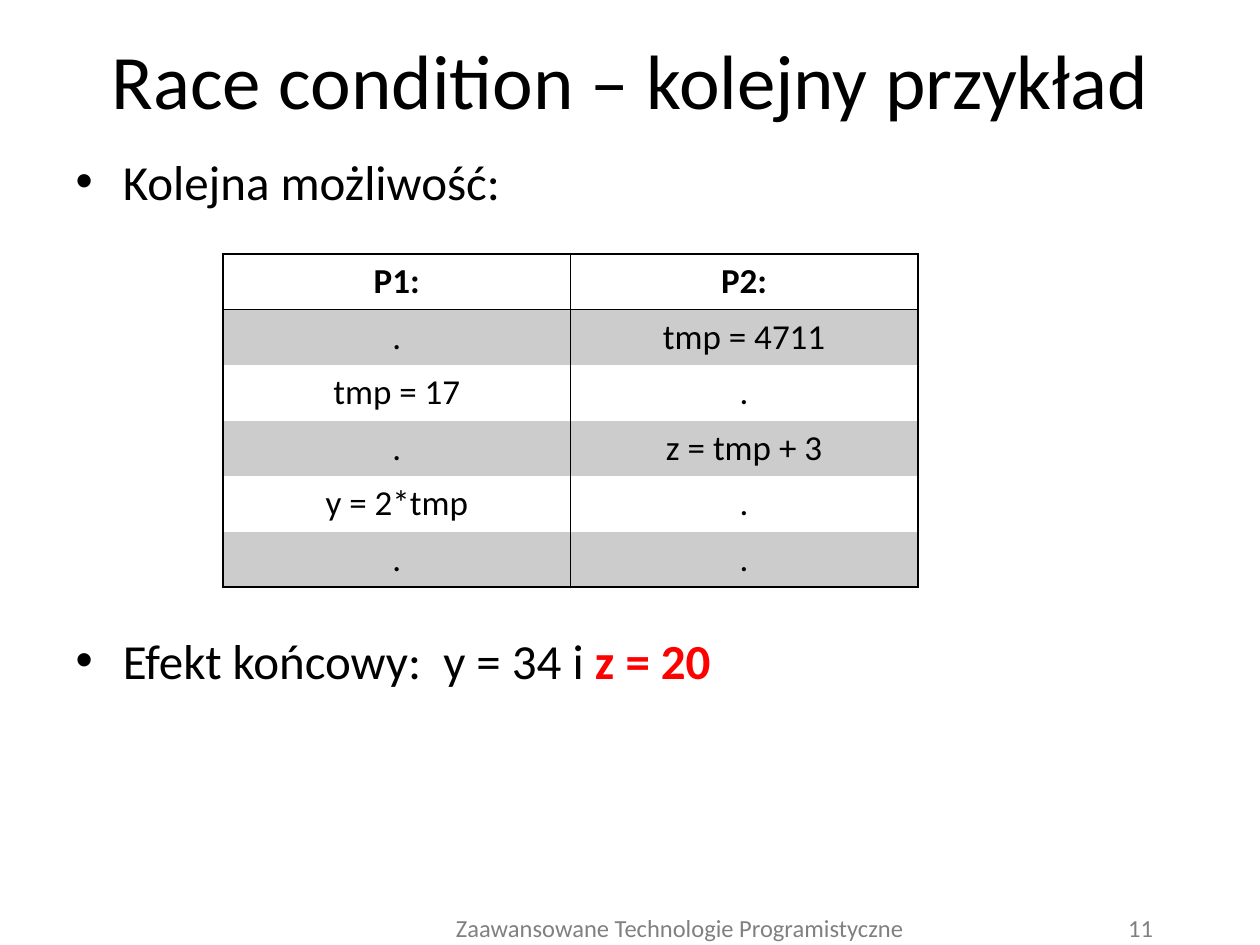
from pptx import Presentation
from pptx.dml.color import RGBColor
from pptx.enum.text import MSO_ANCHOR as Anchor, MSO_AUTO_SIZE as AutoSize, PP_ALIGN as Align
from pptx.oxml import parse_xml
from pptx.oxml.ns import nsdecls
from pptx.util import Pt

BLACK = RGBColor(0x00, 0x00, 0x00)
RED = RGBColor(0xFF, 0x00, 0x00)
GREY = RGBColor(0x80, 0x80, 0x80)
BAND = RGBColor(0xCC, 0xCC, 0xCC)
NO_STYLE = "{2D5ABB26-0587-4C30-8999-92F81FD0307C}"

STEPS = [
    ("P1:", "P2:"),
    (".", "tmp = 4711"),
    ("tmp = 17", "."),
    (".", "z = tmp + 3"),
    ("y = 2*tmp", "."),
    (".", "."),
]


def apply(obj, **values):
    """Set each given value as an attribute of the object."""
    for name, value in values.items():
        setattr(obj, name, value)


def place(sp, box):
    """Move a shape to a box of left, top, width and height."""
    apply(sp, **dict(zip(("left", "top", "width", "height"), map(Pt, box))))


def add_run(p, text, size, color=BLACK, bold=False):
    """Add a formatted run to a paragraph."""
    r = p.add_run()
    r.text = text
    apply(r.font, name="Calibri", size=Pt(size), bold=bold)
    r.font.color.rgb = color


def fill_title(sp, box, text):
    """Write the slide title in its placeholder."""
    place(sp, box)
    tf = sp.text_frame
    apply(tf, vertical_anchor=Anchor.MIDDLE, auto_size=AutoSize.NONE)
    p = tf.paragraphs[0]
    p.alignment = Align.CENTER
    add_run(p, text, 44)


def fill_body(sp, box):
    """Write the two bullets, leaving room between them for the table."""
    place(sp, box)
    tf = sp.text_frame
    tf.auto_size = AutoSize.NONE
    add_run(tf.paragraphs[0], "Kolejna możliwość:", 28)
    p = tf.add_paragraph()
    p.space_before = Pt(240)
    add_run(p, "Efekt końcowy:  y = 34 i ", 28)
    add_run(p, "z = 20", 28, RED, True)


def add_borders(cell, sides):
    """Draw thin black lines on the given sides of a cell."""
    for side in sides:
        cell._tc.get_or_add_tcPr().append(parse_xml(
            f'<a:ln{side} {nsdecls("a")} w="12700"><a:solidFill>'
            f'<a:srgbClr val="{BLACK}"/></a:solidFill></a:ln{side}>'))


def add_steps_table(slide, box, rows):
    """Add the table of interleaved process steps."""
    left, top, width, height = map(Pt, box)
    frame = slide.shapes.add_table(len(rows), len(rows[0]), left, top, width, height)
    table = frame.table
    apply(table, first_row=False, horz_banding=False)
    table._tbl.tblPr.find("{*}tableStyleId").text = NO_STYLE
    for i, row in enumerate(rows):
        sides = "LRTB" if i == 0 else "LRB" if i == len(rows) - 1 else "LR"
        for j, text in enumerate(row):
            cell = table.cell(i, j)
            cell.vertical_anchor = Anchor.MIDDLE
            add_borders(cell, sides)
            if i % 2:
                cell.fill.solid()
                cell.fill.fore_color.rgb = BAND
            else:
                cell.fill.background()
            p = cell.text_frame.paragraphs[0]
            p.alignment = Align.CENTER
            add_run(p, text, 20, bold=i == 0)


def add_footer_text(slide, box, text, align):
    """Add one grey footer text."""
    tf = slide.shapes.add_textbox(*map(Pt, box)).text_frame
    tf.word_wrap = True
    p = tf.paragraphs[0]
    p.alignment = align
    add_run(p, text, 14, GREY)


def main():
    """Build the slide and save it."""
    prs = Presentation()
    apply(prs, slide_width=Pt(720), slide_height=Pt(540))
    slide = prs.slides.add_slide(prs.slide_layouts[1])
    title, body = slide.placeholders
    fill_title(title, (36.5, 0, 648, 90), "Race condition – kolejny przykład")
    fill_body(body, (36, 83, 648, 400))
    add_steps_table(slide, (127.5, 145.2, 397, 190.2), STEPS)
    add_footer_text(slide, (150.5, 518, 476, 22),
                    "Zaawansowane Technologie Programistyczne", Align.CENTER)
    add_footer_text(slide, (626.5, 518, 39.5, 22), "11", Align.RIGHT)
    prs.save("out.pptx")


if __name__ == "__main__":
    main()
